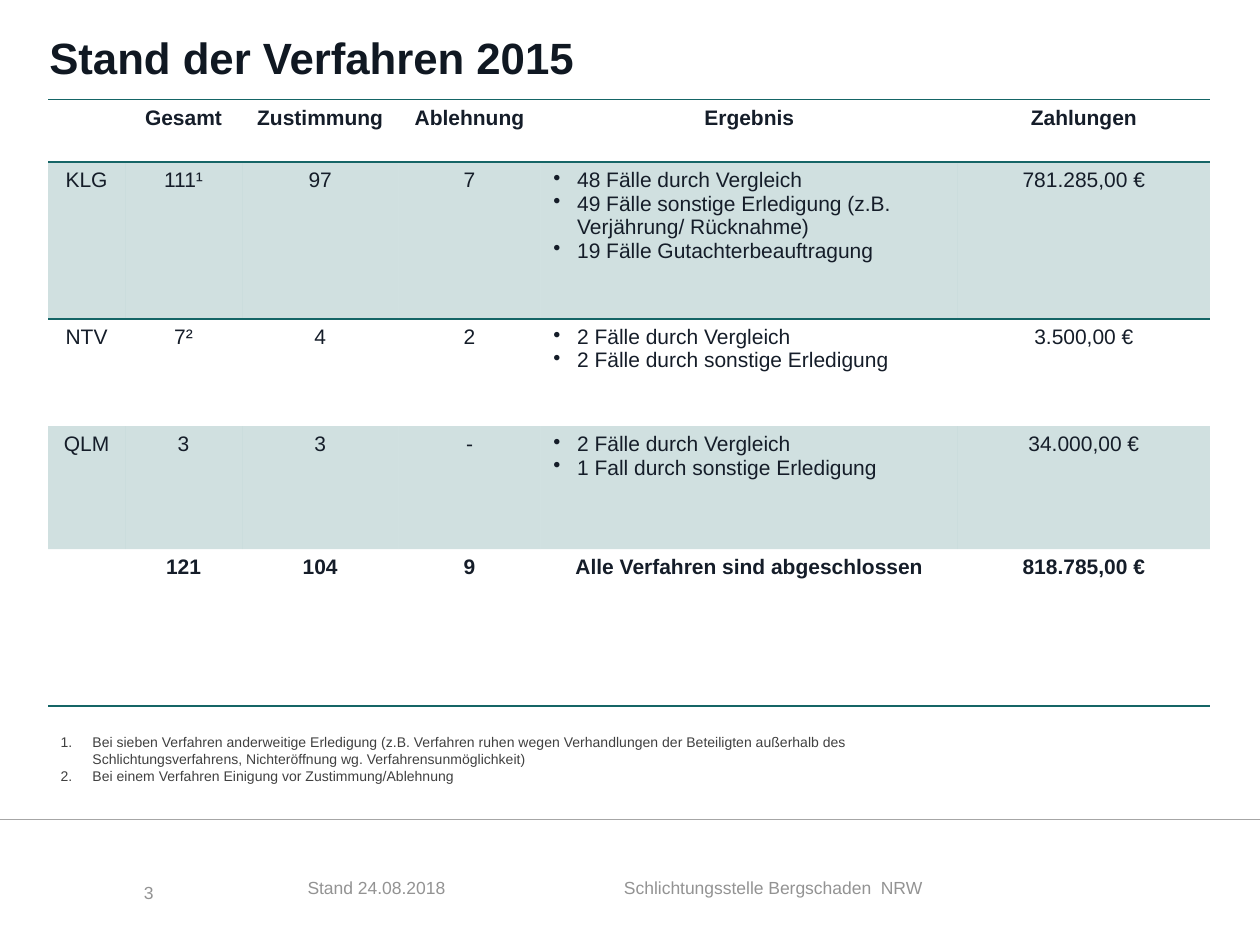
from lxml import etree
from pptx import Presentation
from pptx.dml.color import RGBColor
from pptx.enum.text import MSO_ANCHOR, MSO_AUTO_SIZE, PP_ALIGN
from pptx.oxml.ns import qn
from pptx.util import Cm, Pt

LEFT, CENTER = PP_ALIGN.LEFT, PP_ALIGN.CENTER
TOP, MIDDLE = MSO_ANCHOR.TOP, MSO_ANCHOR.MIDDLE
NO_AUTOFIT = MSO_AUTO_SIZE.NONE
NO_TABLE_STYLE = "{2D5ABB26-0587-4C30-8999-92F81FD0307C}"
COLORS = {"title": "101822", "table": "151D29", "accent": "156566",
          "note": "404040", "footer": "939393", "rule": "A6A6A6"}


def format_paragraph(para, size, color, bold=False, align=LEFT):
    para.alignment = align
    para.space_before = Pt(0)
    para.font.name = "Arial"
    para.font.size = Pt(size)
    para.font.bold = bold
    para.font.color.rgb = RGBColor.from_string(COLORS[color])


def add_marker(para, indent, tag, **attributes):
    properties = para._p.get_or_add_pPr()
    properties.set("marL", str(indent))
    properties.set("indent", str(-indent))
    etree.SubElement(properties, qn(tag), **attributes)


deck = Presentation()
deck.slide_width, deck.slide_height = Cm(25.4), Cm(19.05)
page = deck.slides.add_slide(deck.slide_layouts[1])

rule = page.shapes.add_connector(1, 0, Cm(16.51), deck.slide_width, Cm(16.51))
rule.line.color.rgb = RGBColor.from_string(COLORS["rule"])
rule.line.width = Pt(0.5)
etree.SubElement(rule._element.spPr, qn("a:effectLst"))

title, notes = page.placeholders
title.left, title.top, title.width, title.height = Cm(0.74), Cm(0.48), Cm(22.99), Cm(1.32)
title.text_frame.text = "Stand der Verfahren 2015"
title.text_frame.vertical_anchor = MIDDLE
title.text_frame.auto_size = NO_AUTOFIT
format_paragraph(title.text_frame.paragraphs[0], 25, "title", bold=True)

notes.left, notes.top, notes.width, notes.height = Cm(0.97), Cm(14.66), Cm(18.8), Cm(1.98)
notes.text_frame.text = (
    "Bei sieben Verfahren anderweitige Erledigung (z.B. Verfahren ruhen wegen Verhandlungen "
    "der Beteiligten außerhalb des Schlichtungsverfahrens, Nichteröffnung wg. "
    "Verfahrensunmöglichkeit)\n"
    "Bei einem Verfahren Einigung vor Zustimmung/Ablehnung")
notes.text_frame.vertical_anchor = TOP
notes.text_frame.auto_size = NO_AUTOFIT
for para in notes.text_frame.paragraphs:
    add_marker(para, Cm(0.64), "a:buAutoNum", type="arabicPeriod")
    format_paragraph(para, 8, "note")

footers = [
    ("3", 2.9, 17.78, 3.3),
    ("Stand 24.08.2018", 6.2, 17.68, 2.97),
    ("Schlichtungsstelle Bergschaden  NRW", 12.58, 17.68, 9.87),
]
for text, left, top, width in footers:
    box = page.shapes.add_textbox(Cm(left), Cm(top), Cm(width), Cm(0.53))
    frame = box.text_frame
    frame.margin_left = frame.margin_right = frame.margin_top = frame.margin_bottom = 0
    frame.word_wrap = True
    frame.text = text
    format_paragraph(frame.paragraphs[0], 10, "footer")

rows = [
    ["", "Gesamt", "Zustimmung", "Ablehnung", "Ergebnis", "Zahlungen"],
    ["KLG", "111¹", "97", "7",
     "48 Fälle durch Vergleich\n"
     "49 Fälle sonstige Erledigung (z.B. Verjährung/ Rücknahme)\n"
     "19 Fälle Gutachterbeauftragung", "781.285,00 €"],
    ["NTV", "7²", "4", "2",
     "2 Fälle durch Vergleich\n2 Fälle durch sonstige Erledigung", "3.500,00 €"],
    ["QLM", "3", "3", "-",
     "2 Fälle durch Vergleich\n1 Fall durch sonstige Erledigung", "34.000,00 €"],
    ["", "121", "104", "9", "Alle Verfahren sind abgeschlossen", "818.785,00 €"],
]
column_widths = [1.55, 2.36, 3.15, 2.87, 8.41, 5.08]
row_heights = [1.26, 3.16, 2.16, 2.48, 3.16]
row_borders = {0: ["a:lnT", "a:lnB"], 1: ["a:lnT"], 4: ["a:lnB"]}
RESULT_COLUMN = 4

table_frame = page.shapes.add_table(len(rows), len(column_widths), Cm(0.97), Cm(2.01),
                                    Cm(sum(column_widths)), Cm(sum(row_heights)))
table = table_frame.table
table._tbl.tblPr.find(qn("a:tableStyleId")).text = NO_TABLE_STYLE
for column, width in zip(table.columns, column_widths):
    column.width = Cm(width)

for row_index, (values, height) in enumerate(zip(rows, row_heights)):
    table.rows[row_index].height = Cm(height)
    emphasized = row_index in (0, len(rows) - 1)
    for column_index, value in enumerate(values):
        cell = table.cell(row_index, column_index)
        cell.text = value
        bulleted = column_index == RESULT_COLUMN and not emphasized
        for para in cell.text_frame.paragraphs:
            if bulleted:
                add_marker(para, Cm(0.48), "a:buChar", char="•")
            format_paragraph(para, 12, "table", emphasized, LEFT if bulleted else CENTER)
        for side in row_borders.get(row_index, []):
            border = etree.SubElement(cell._tc.get_or_add_tcPr(), qn(side), w=str(Pt(1)))
            border_fill = etree.SubElement(border, qn("a:solidFill"))
            etree.SubElement(border_fill, qn("a:srgbClr"), val=COLORS["accent"])
        if row_index % 2:
            cell.fill.solid()
            cell.fill.fore_color.rgb = RGBColor.from_string(COLORS["accent"])
            shade = cell._tc.tcPr.find(qn("a:solidFill")).find(qn("a:srgbClr"))
            etree.SubElement(shade, qn("a:alpha"), val="20000")
        else:
            cell.fill.background()

deck.save("out.pptx")
